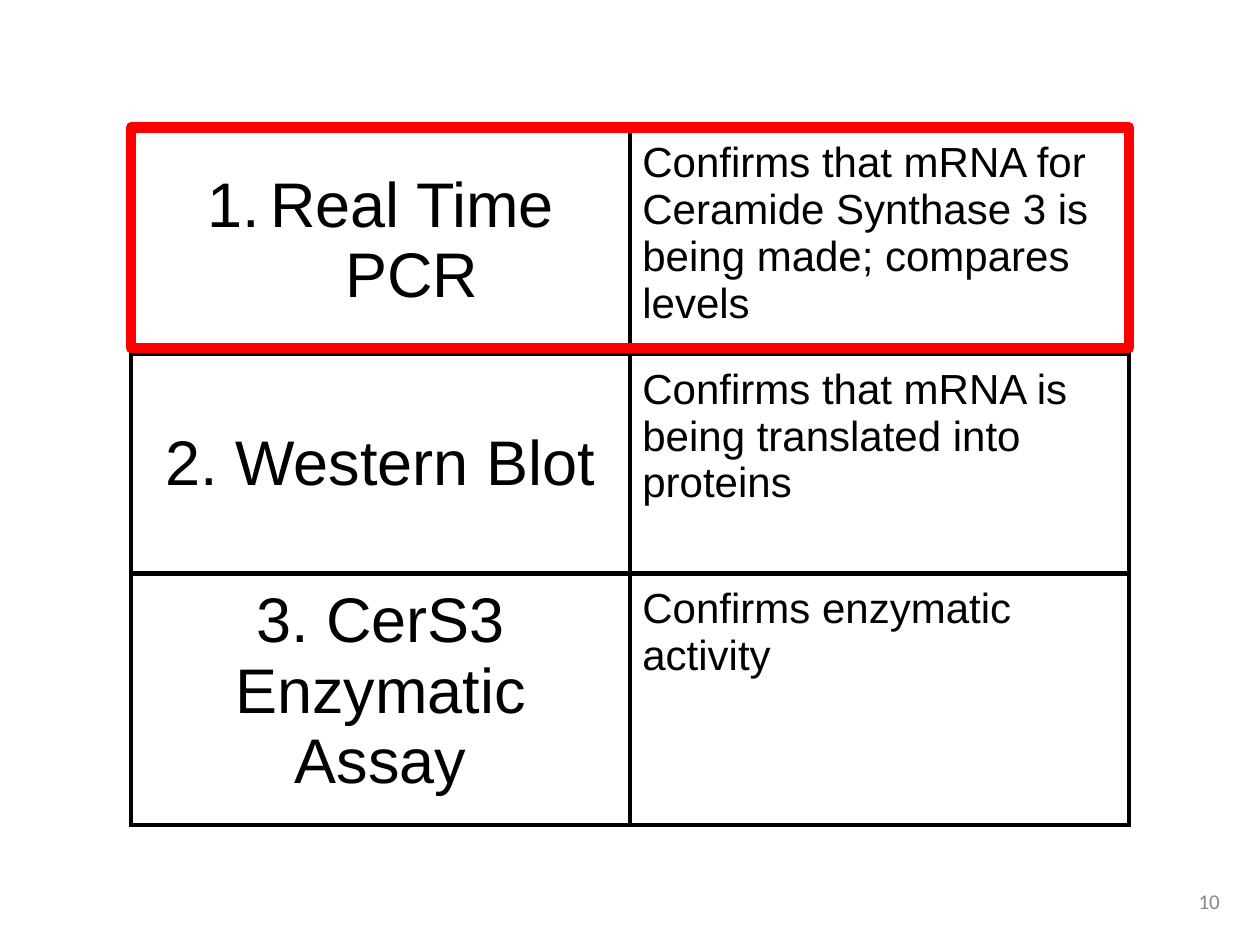
"""Build a slide with a table of three assays, the first one framed in red."""
import pptx
import pptx.dml.color
import pptx.enum.shapes
import pptx.enum.text
import pptx.oxml
import pptx.oxml.ns
import pptx.util

Cm = pptx.util.Cm
Pt = pptx.util.Pt
ALIGN = pptx.enum.text.PP_ALIGN
ANCHOR = pptx.enum.text.MSO_ANCHOR
COLORS = {"ink": "000000", "frame": "FF0000", "number": "888888"}
NAMESPACE = pptx.oxml.ns.nsdecls("a")
LEFT, TOP, WIDTH, ROW_HEIGHT = Cm(2.64), Cm(2.57), Cm(20.12), Cm(4.42)
MARGIN = Cm(0.25)

assays = [
    ("Real Time PCR", ANCHOR.MIDDLE,
     "Confirms that mRNA for Ceramide Synthase 3 is being made; compares levels"),
    ("2. Western Blot", ANCHOR.MIDDLE,
     "Confirms that mRNA is being translated into proteins"),
    ("3. CerS3 Enzymatic Assay", ANCHOR.TOP, "Confirms enzymatic activity"),
]


def write(paragraph, text, color, alignment, **font_format):
    paragraph.alignment = alignment
    run = paragraph.add_run()
    run.text = text
    for name, value in font_format.items():
        setattr(run.font, name, value)
    run.font.color.rgb = pptx.dml.color.RGBColor.from_string(COLORS[color])


def add_borders(cell):
    properties = cell._tc.get_or_add_tcPr()
    for index, side in enumerate(("lnL", "lnR", "lnT", "lnB")):
        properties.insert(index, pptx.oxml.parse_xml(
            f'<a:{side} {NAMESPACE} w="{Pt(3)}"><a:solidFill>'
            f'<a:srgbClr val="{COLORS["ink"]}"/></a:solidFill></a:{side}>'))


presentation = pptx.Presentation()
presentation.slide_width, presentation.slide_height = Cm(25.4), Cm(19.05)
slide = presentation.slides.add_slide(presentation.slide_layouts[6])

number_box = slide.shapes.add_textbox(Cm(18.92), Cm(17.65), Cm(5.92), Cm(1.02))
number_box.text_frame.word_wrap = True
number_box.text_frame.vertical_anchor = ANCHOR.MIDDLE
write(number_box.text_frame.paragraphs[0], "10", "number", ALIGN.RIGHT,
      name="Calibri", size=Pt(12))

table = slide.shapes.add_table(
    len(assays), 2, LEFT, TOP, WIDTH, ROW_HEIGHT * len(assays)).table
table.first_row = table.horz_banding = False
for row, (assay, anchor, purpose) in enumerate(assays):
    table.rows[row].height = ROW_HEIGHT
    columns = [(assay, anchor, ALIGN.CENTER, 36), (purpose, ANCHOR.TOP, ALIGN.LEFT, 24)]
    for column, (text, vertical_anchor, alignment, size) in enumerate(columns):
        cell = table.cell(row, column)
        cell_format = {"vertical_anchor": vertical_anchor, "margin_left": MARGIN,
                       "margin_right": MARGIN, "margin_top": MARGIN,
                       "margin_bottom": MARGIN}
        for name, value in cell_format.items():
            setattr(cell, name, value)
        cell.fill.background()
        add_borders(cell)
        write(cell.text_frame.paragraphs[0], text, "ink", alignment,
              name="Arial", size=Pt(size))

numbering = table.cell(0, 0).text_frame.paragraphs[0]._p.get_or_add_pPr()
numbering.set("marL", str(Cm(1.27)))
numbering.set("indent", str(-Cm(1.27)))
for element in ('buFont {} typeface="+mj-lt"', 'buAutoNum {} type="arabicPeriod"'):
    numbering.append(pptx.oxml.parse_xml(f"<a:{element.format(NAMESPACE)}/>"))

frame = slide.shapes.add_shape(
    pptx.enum.shapes.MSO_SHAPE.RECTANGLE, LEFT, TOP, WIDTH, Cm(4.45))
frame.shadow.inherit = False
frame.fill.background()
frame.line.color.rgb = pptx.dml.color.RGBColor.from_string(COLORS["frame"])
frame.line.width = Pt(6)
frame.line._get_or_add_ln().append(pptx.oxml.parse_xml(f"<a:round {NAMESPACE}/>"))

presentation.save("out.pptx")
